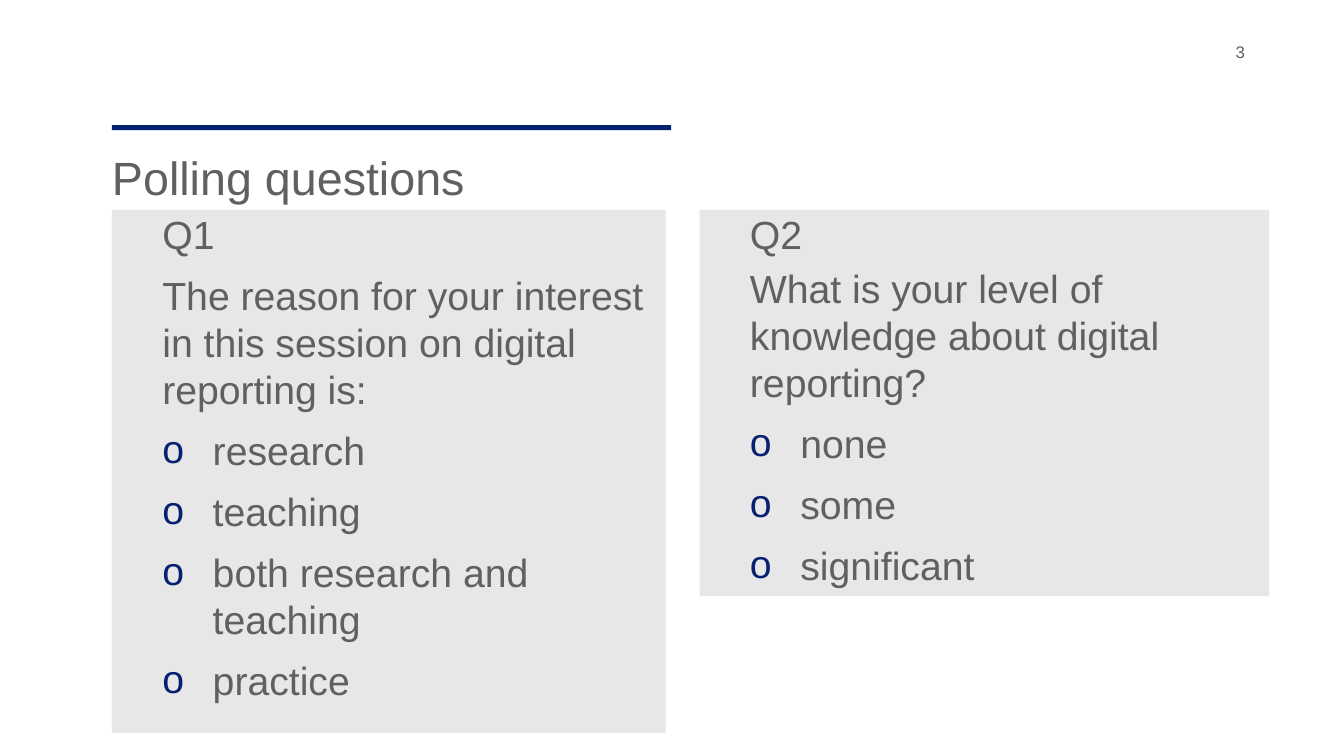
import pptx
import pptx.dml.color
import pptx.enum.shapes
import pptx.enum.text
import pptx.oxml.ns
import pptx.util
import lxml.etree

Pt = pptx.util.Pt
GREY, NAVY, BULLET, PANEL = "5F6061", "072171", "072071", "E7E7E7"
INDENT = 36
QUESTIONS = [
    ((80, 150, 395.5, 373.5), 10, "Q1",
     "The reason for your interest in this session on digital reporting is:",
     ["research", "teaching", "both research and teaching", "practice"]),
    ((499.7, 150, 406.8, 275.8), 5, "Q2",
     "What is your level of knowledge about digital reporting?",
     ["none", "some", "significant"]),
]


def color(value):
    """Return an RGB colour from a hex string."""
    return pptx.dml.color.RGBColor.from_string(value)


def apply(target, values):
    """Set each attribute named in values on the target."""
    for name, value in values.items():
        setattr(target, name, value)


def format_frame(frame):
    """Make a wrapping, top-anchored text frame without margins."""
    apply(frame, {
        "word_wrap": True,
        "auto_size": pptx.enum.text.MSO_AUTO_SIZE.NONE,
        "vertical_anchor": pptx.enum.text.MSO_ANCHOR.TOP,
        "margin_left": 0, "margin_top": 0, "margin_right": 0, "margin_bottom": 0,
    })


def write(paragraph, text, size, space=0):
    """Write one left-aligned grey paragraph."""
    paragraph.text = text
    apply(paragraph, {"alignment": pptx.enum.text.PP_ALIGN.LEFT,
                      "space_before": Pt(space), "line_spacing": 1.0})
    apply(paragraph.font, {"name": "Arial", "size": Pt(size)})
    paragraph.font.color.rgb = color(GREY)


def indent(paragraph, bulleted):
    """Indent a paragraph, with a hanging bullet if asked."""
    properties = paragraph._p.get_or_add_pPr()
    properties.set("marL", str(Pt(INDENT * (2 if bulleted else 1))))
    properties.set("indent", str(Pt(-INDENT if bulleted else 0)))
    if bulleted:
        name = pptx.oxml.ns.qn
        bullet_color = lxml.etree.SubElement(properties, name("a:buClr"))
        lxml.etree.SubElement(bullet_color, name("a:srgbClr"), val=BULLET)
        lxml.etree.SubElement(properties, name("a:buFont"), typeface="Arial")
        lxml.etree.SubElement(properties, name("a:buChar"), char="o")


def add_rectangle(slide, box, fill):
    """Add a plain filled rectangle."""
    shape = slide.shapes.add_shape(
        pptx.enum.shapes.MSO_SHAPE.RECTANGLE, *map(Pt, box))
    shape.shadow.inherit = False
    shape.fill.solid()
    shape.fill.fore_color.rgb = color(fill)
    shape.line.fill.background()
    return shape


def add_heading(slide, box, text):
    """Place the rule and the title below it."""
    left, top, width, height = box
    add_rectangle(slide, (left, top, 399.5, 3.6), NAVY)
    title = slide.shapes.title
    apply(title, {"left": Pt(left), "top": Pt(top + 17),
                  "width": Pt(width), "height": Pt(height - 17)})
    format_frame(title.text_frame)
    write(title.text_frame.paragraphs[0], text, 33.3)


def add_question(slide, box, space, label, question, answers):
    """Place a panel with a question and its bulleted answers."""
    frame = add_rectangle(slide, box, PANEL).text_frame
    format_frame(frame)
    for index, text in enumerate([label, question, *answers]):
        paragraph = frame.add_paragraph() if index else frame.paragraphs[0]
        bulleted = index > 1
        indent(paragraph, bulleted)
        write(paragraph, text, 28, (10 if bulleted else space) if index else 0)


def add_page_number(slide, box, number):
    """Place the page number."""
    frame = slide.shapes.add_textbox(*map(Pt, box)).text_frame
    format_frame(frame)
    write(frame.paragraphs[0], number, 12)


def main():
    """Build and save the slide."""
    presentation = pptx.Presentation()
    apply(presentation, {"slide_width": Pt(960), "slide_height": Pt(540)})
    slide = presentation.slides.add_slide(presentation.slide_layouts[5])
    add_heading(slide, (80, 89.3, 802, 69), "Polling questions")
    for question in QUESTIONS:
        add_question(slide, *question)
    add_page_number(slide, (882.5, 29.5, 48, 21), "3")
    presentation.save("out.pptx")


if __name__ == "__main__":
    main()
